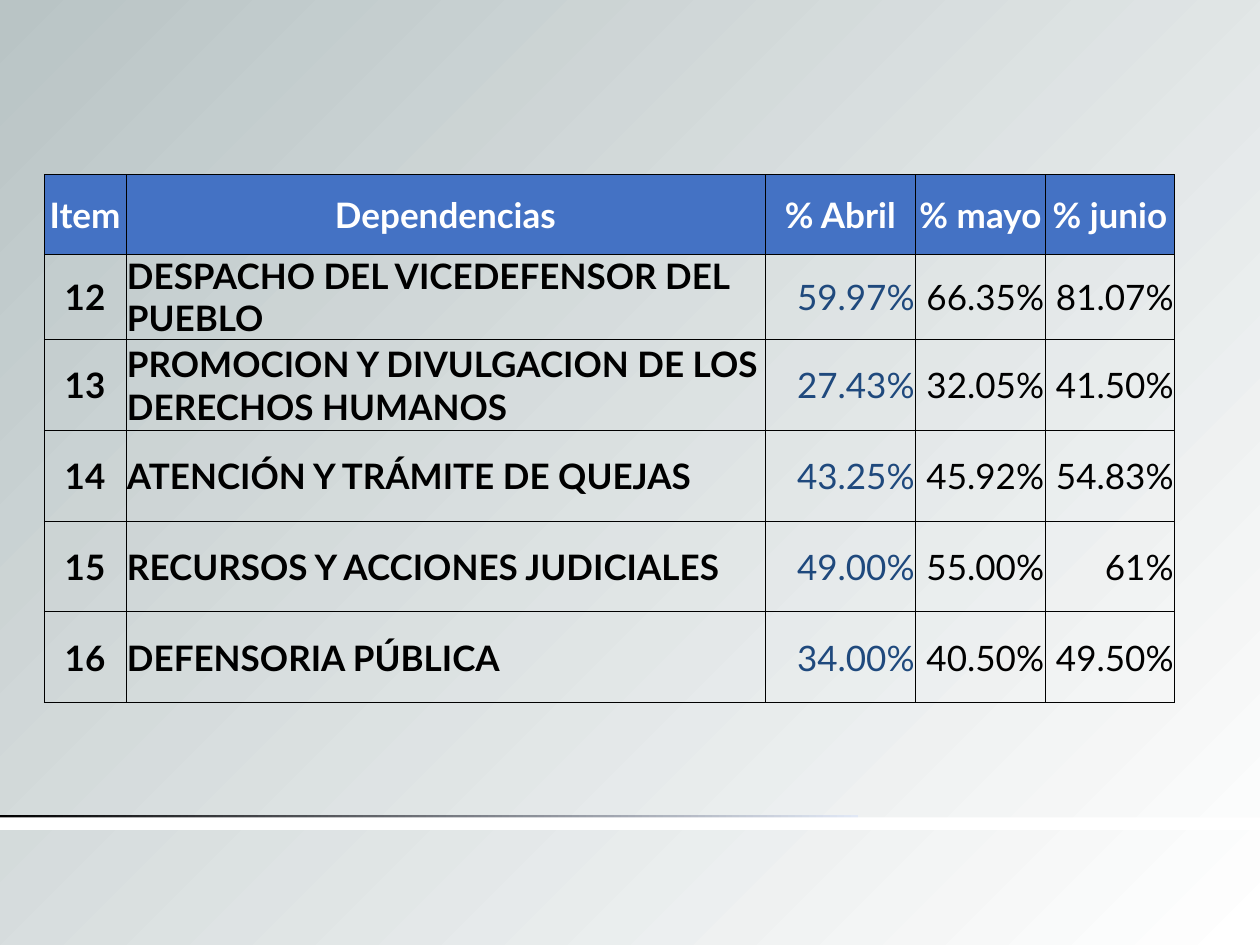
from lxml.etree import SubElement as Sub
from pptx import Presentation as Deck
from pptx.dml.color import RGBColor as Rgb
from pptx.enum.shapes import MSO_SHAPE as Kind
from pptx.enum.text import MSO_ANCHOR as Anchor, PP_ALIGN as Align
from pptx.oxml.ns import qn
from pptx.util import Cm, Pt

HUES = {
    "black": "000000",
    "white": "FFFFFF",
    "mist": "B9C4C5",
    "pale": "E1E8F5",
    "blue": "4472C4",
    "navy": "1F497D",
}
HEAD = ["Item", "Dependencias", "% Abril", "% mayo", "% junio"]
BODY = [
    ["12", "DESPACHO DEL VICEDEFENSOR DEL PUEBLO", "59.97%", "66.35%", "81.07%"],
    ["13", "PROMOCION Y DIVULGACION DE LOS DERECHOS HUMANOS", "27.43%", "32.05%", "41.50%"],
    ["14", "ATENCIÓN Y TRÁMITE DE QUEJAS", "43.25%", "45.92%", "54.83%"],
    ["15", "RECURSOS Y ACCIONES JUDICIALES", "49.00%", "55.00%", "61%"],
    ["16", "DEFENSORIA PÚBLICA", "34.00%", "40.50%", "49.50%"],
]
WIDTHS = [1.65, 12.88, 3.04, 2.61, 2.61]
HEIGHTS = [1.6, 1.4] + [1.83] * 4
TITLE = {"align": Align.CENTER, "bold": True, "hue": "white"}
MONTH = {"align": Align.RIGHT, "bold": False, "hue": "black"}
STYLES = [
    {"align": Align.CENTER, "bold": True, "hue": "black"},
    {"align": Align.LEFT, "bold": True, "hue": "black"},
    {**MONTH, "hue": "navy"},
    MONTH,
    MONTH,
]
CELL = {
    "vertical_anchor": Anchor.MIDDLE,
    "margin_left": Cm(0.02),
    "margin_right": Cm(0.02),
    "margin_top": Cm(0.02),
    "margin_bottom": 0,
}


def put(item, values):
    for name, value in values.items():
        setattr(item, name, value)


def color(name):
    return Rgb.from_string(HUES[name])


def paint(fill, name):
    fill.solid()
    fill.fore_color.rgb = color(name)


def blend(fill, first, last):
    fill.gradient()
    for stop, name, place in zip(fill.gradient_stops, (first, last), (0, 1)):
        stop.color.rgb = color(name)
        stop.position = place


def backdrop(slide):
    blend(slide.background.fill, "white", "mist")
    line = slide.element.find(".//" + qn("a:lin"))
    grad = line.getparent()
    grad.remove(line)
    ring = Sub(grad, qn("a:path"), path="circle")
    Sub(ring, qn("a:fillToRect"), l="100000", t="100000")


def bar(slide, top, width, height):
    shape = slide.shapes.add_shape(Kind.RECTANGLE, 0, Cm(top), Cm(width), Cm(height))
    shape.shadow.inherit = False
    shape.line.fill.background()
    return shape.fill


def border(cell):
    props = cell._tc.get_or_add_tcPr()
    for side in ("lnL", "lnR", "lnT", "lnB"):
        line = Sub(props, qn("a:" + side), w=str(Pt(0.5)))
        fill = Sub(line, qn("a:solidFill"))
        Sub(fill, qn("a:srgbClr"), val=HUES["black"])


def write(cell, text, style):
    put(cell, CELL)
    cell.text = text
    para = cell.text_frame.paragraphs[0]
    para.alignment = style["align"]
    font = para.runs[0].font
    put(font, {"name": "Lato", "size": Pt(20), "bold": style["bold"]})
    font.color.rgb = color(style["hue"])


def grid(slide):
    rows = [HEAD] + BODY
    frame = slide.shapes.add_table(
        len(rows), len(HEAD), Cm(0.89), Cm(3.52), Cm(sum(WIDTHS)), Cm(sum(HEIGHTS))
    )
    table = frame.table
    put(table, {"first_row": False, "horz_banding": False})
    for col, width in zip(table.columns, WIDTHS):
        col.width = Cm(width)
    for row, height in zip(table.rows, HEIGHTS):
        row.height = Cm(height)
    for r, texts in enumerate(rows):
        for c, text in enumerate(texts):
            cell = table.cell(r, c)
            write(cell, text, STYLES[c] if r else TITLE)
            border(cell)
            if r:
                cell.fill.background()
            else:
                paint(cell.fill, "blue")


def main():
    deck = Deck()
    put(deck, {"slide_width": Cm(25.4), "slide_height": Cm(19.05)})
    slide = deck.slides.add_slide(deck.slide_layouts[6])
    backdrop(slide)
    rule = bar(slide, 16.43, 17.3, 0.13)
    blend(rule, "black", "pale")
    rule.gradient_angle = 0
    paint(bar(slide, 16.48, 25.4, 0.25), "white")
    grid(slide)
    deck.save("out.pptx")


if __name__ == "__main__":
    main()
